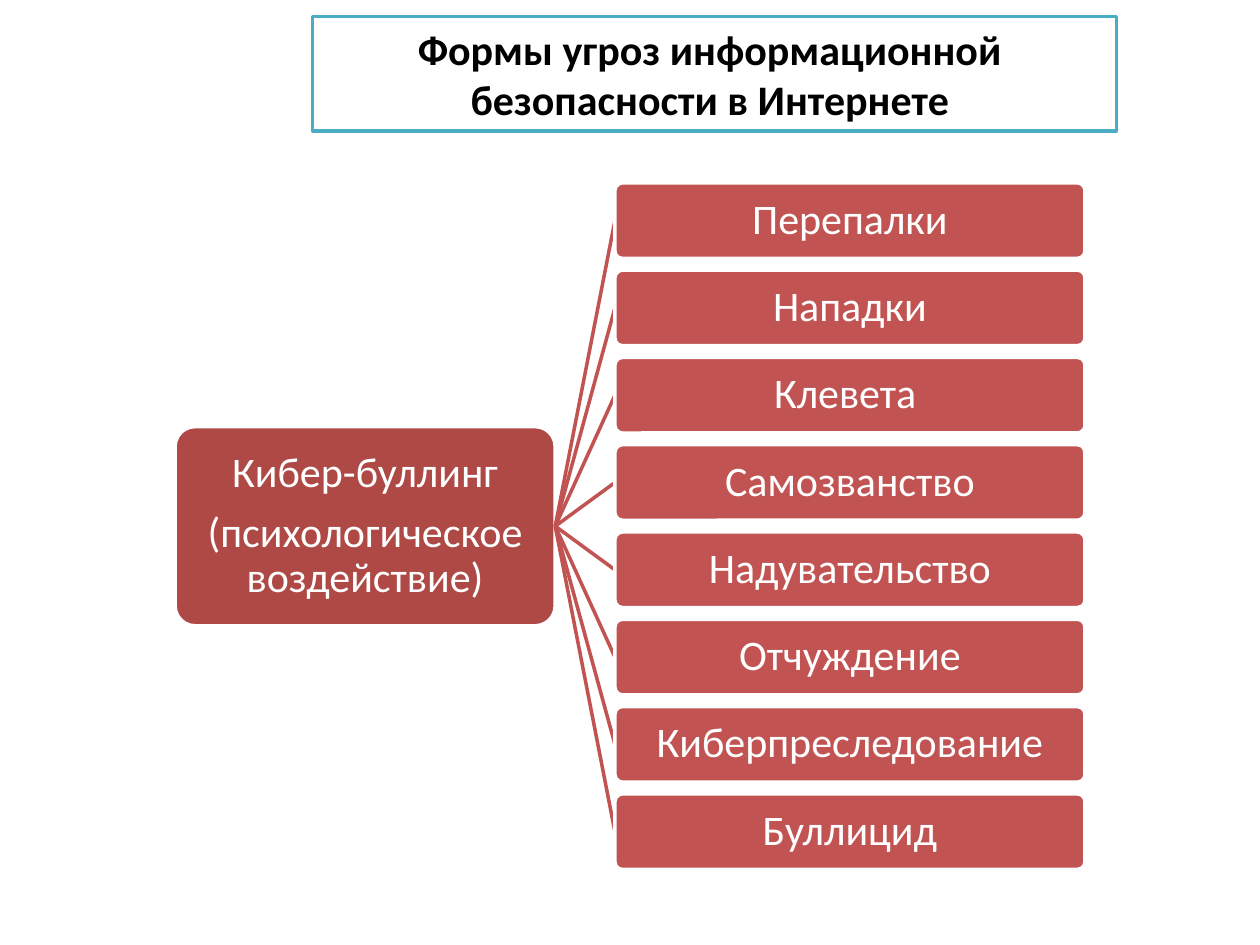
import pptx
import pptx.dml.color
import pptx.enum.shapes
import pptx.enum.text
import pptx.util
from lxml import etree

Pt = pptx.util.Pt
RGB = pptx.dml.color.RGBColor.from_string
ALIGN = pptx.enum.text.PP_ALIGN
MIDDLE = pptx.enum.text.MSO_ANCHOR.MIDDLE

# Content
HEADING = ["Формы угроз информационной ", "безопасности в Интернете "]
THREAT = ["Кибер-буллинг", "(психологическое воздействие)"]
FORMS = ["Перепалки", "Нападки", "Клевета ", "Самозванство", "Надувательство",
         "Отчуждение", "Киберпреследование", "Буллицид"]

THEME = {
    "font": "Calibri", "size": 24, "line": 2,
    "paper": "FFFFFF", "ink": "000000", "frame": "4BACC6",
    "threat": "AE4946", "form": "C15452",
}

# Layout in points
HEADING_BOX = (178.6, 9.4, 459.4, 65.5)
THREAT_LEFT, THREAT_WIDTH, THREAT_HEIGHT = 100.1, 217.2, 113.8
FORM_LEFT, FORM_TOP, FORM_WIDTH, FORM_HEIGHT = 351.4, 104.5, 268.6, 43.2
FORM_PITCH = 49.88
INSET = 3


def paint(shape, fill, line):
    shape.fill.solid()
    shape.fill.fore_color.rgb = RGB(fill)
    shape.line.color.rgb = RGB(line)
    shape.line.width = Pt(THEME["line"])


def write(frame, lines, color, bold=False, spacing=1.0, after=0):
    frame.word_wrap = True
    frame.vertical_anchor = MIDDLE
    for index, line in enumerate(lines):
        paragraph = frame.paragraphs[0] if index == 0 else frame.add_paragraph()
        paragraph.alignment = ALIGN.CENTER
        paragraph.line_spacing = spacing
        paragraph.space_before = Pt(0)
        paragraph.space_after = Pt(after)
        run = paragraph.add_run()
        run.text = line
        run.font.name = THEME["font"]
        run.font.size = Pt(THEME["size"])
        run.font.bold = bold
        run.font.color.rgb = RGB(color)


def add_node(slide, box, lines, fill):
    node = slide.shapes.add_shape(
        pptx.enum.shapes.MSO_SHAPE.ROUNDED_RECTANGLE, *map(Pt, box))
    node.adjustments[0] = 0.1
    node.shadow.inherit = False
    paint(node, fill, THEME["paper"])
    frame = node.text_frame
    frame.margin_left = frame.margin_right = Pt(INSET)
    frame.margin_top = frame.margin_bottom = Pt(INSET)
    write(frame, lines, THEME["paper"], spacing=0.9, after=0.35 * THEME["size"])
    return node


def add_branch(slide, threat):
    branch = slide.shapes.add_connector(
        pptx.enum.shapes.MSO_CONNECTOR.STRAIGHT, 0, 0, 0, 0)
    branch.begin_connect(threat, 3)
    branch.line.color.rgb = RGB(THEME["form"])
    branch.line.width = Pt(THEME["line"])
    etree.SubElement(branch.element.spPr, pptx.oxml.ns.qn("a:effectLst"))
    return branch


def main():
    deck = pptx.Presentation()
    deck.slide_width, deck.slide_height = Pt(720), Pt(540)
    slide = deck.slides.add_slide(deck.slide_layouts[5])

    # Framed heading
    heading = slide.shapes.title
    heading.left, heading.top, heading.width, heading.height = map(Pt, HEADING_BOX)
    paint(heading, THEME["paper"], THEME["frame"])
    heading.text_frame.auto_size = pptx.enum.text.MSO_AUTO_SIZE.NONE
    write(heading.text_frame, HEADING, THEME["ink"], bold=True)

    # Threat, centred on the column of its forms
    column_height = FORM_PITCH * (len(FORMS) - 1) + FORM_HEIGHT
    threat_top = FORM_TOP + (column_height - THREAT_HEIGHT) / 2
    threat = add_node(slide, (THREAT_LEFT, threat_top, THREAT_WIDTH, THREAT_HEIGHT),
                      THREAT, THEME["threat"])

    # Forms, each over the end of its branch
    for row, name in enumerate(FORMS):
        branch = add_branch(slide, threat)
        box = (FORM_LEFT, FORM_TOP + row * FORM_PITCH, FORM_WIDTH, FORM_HEIGHT)
        form = add_node(slide, box, [name], THEME["form"])
        branch.end_connect(form, 1)

    deck.save("out.pptx")


if __name__ == "__main__":
    main()
